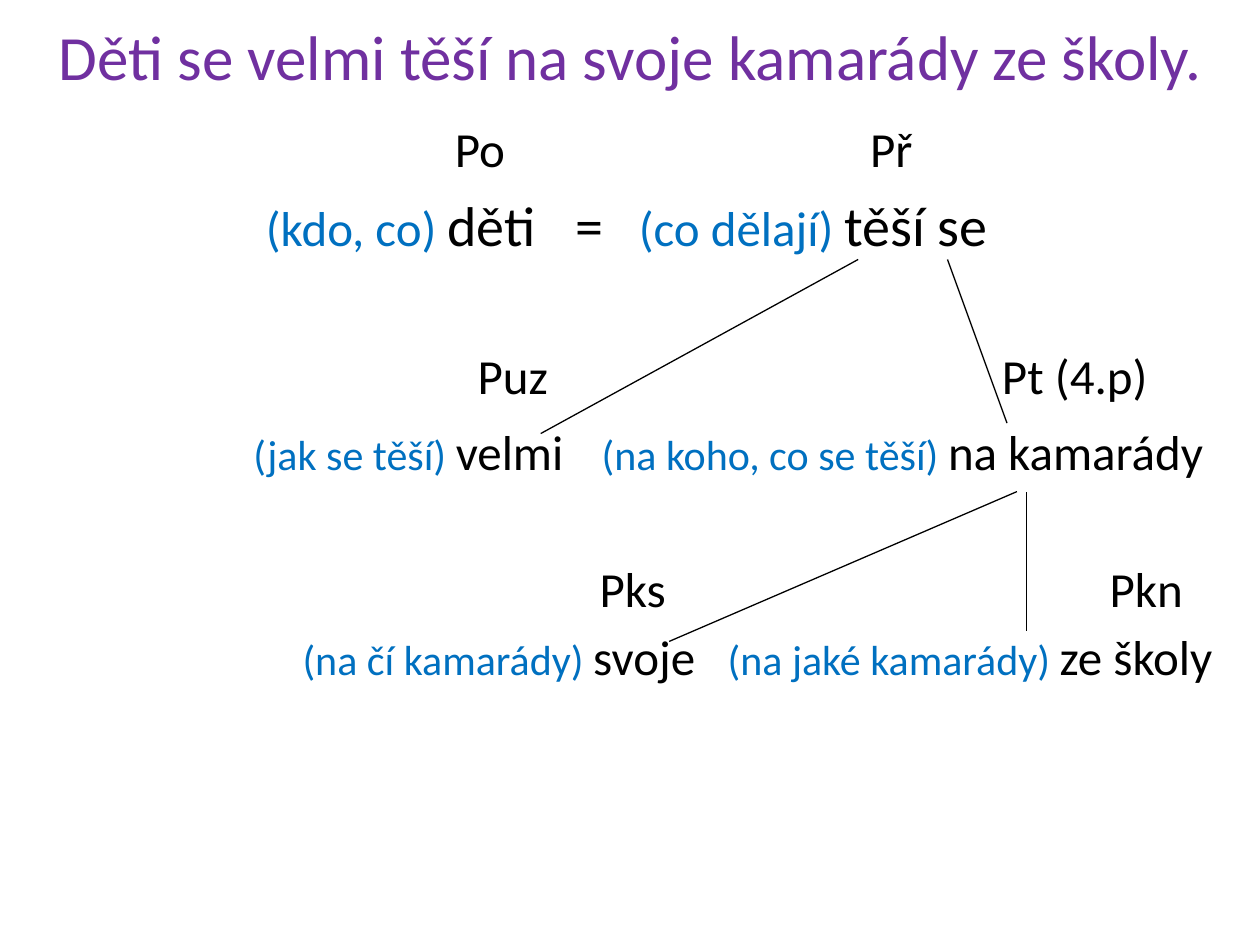
from dataclasses import dataclass

from lxml.etree import SubElement
from pptx import Presentation
from pptx.dml.color import RGBColor as RGB
from pptx.enum.shapes import MSO_CONNECTOR as Connector
from pptx.enum.text import MSO_ANCHOR as Anchor, PP_ALIGN as Align
from pptx.oxml.ns import qn
from pptx.util import Cm, Pt


@dataclass(frozen=True)
class Theme:
    font: str = "Calibri"
    title: RGB = RGB(0x70, 0x30, 0xA0)
    question: RGB = RGB(0x00, 0x70, 0xC0)
    text: RGB = RGB(0, 0, 0)
    title_size: int = 36
    large: int = 32
    normal: int = 28
    small: int = 24
    line: float = 0.75


T = Theme()

# Run styles: size and colour
LABEL = WORD = (T.normal, T.text)
MAIN_ASK = (T.normal, T.question)
MAIN_WORD = (T.large, T.text)
ASK = (T.small, T.question)

# Content
TITLE = "Děti se velmi těší na svoje kamarády ze školy."

# Each row: space before (pt), then columns of (left edge in cm, runs)
ROWS = [
    (0, [(9.17, [("Po", LABEL)]), (17.54, [("Př", LABEL)])]),
    (7.5, [(5.36, [("(kdo, co) ", MAIN_ASK), ("děti", MAIN_WORD)]),
           (11.6, [("=", MAIN_WORD)]),
           (12.88, [("(co dělají) ", MAIN_ASK), ("těší se", MAIN_WORD)])]),
    (50, [(9.63, [("Puz", LABEL)]), (20.2, [("Pt (4.p)", LABEL)])]),
    (10, [(5.11, [("(jak se těší) ", ASK), ("velmi", WORD)]),
          (12.13, [("(na koho, co se těší) ", ASK), ("na kamarády", WORD)])]),
    (44.5, [(12.09, [("Pks", LABEL)]), (22.37, [("Pkn", LABEL)])]),
    (5, [(6.1, [("(na čí kamarády) ", ASK), ("svoje", WORD)]),
         (14.67, [("(na jaké kamarády) ", ASK), ("ze školy", WORD)])]),
]

# Branches of the sentence tree in cm: x1, y1, x2, y2
BRANCHES = [
    (17.3, 5.23, 10.9, 8.74),
    (19.1, 5.23, 20.3, 8.53),
    (20.7, 9.92, 20.7, 12.73),
    (20.5, 9.91, 13.49, 12.93),
]

LEFT, WIDTH, INSET = 0.3, 24.8, 0.25


def add_text_frame(slide, top, height):
    tf = slide.shapes.add_textbox(Cm(LEFT), Cm(top), Cm(WIDTH), Cm(height)).text_frame
    tf.word_wrap = True
    tf.margin_left = tf.margin_right = Cm(INSET)
    return tf


def add_tabs(p, edges):
    tabs = SubElement(p._p.get_or_add_pPr(), qn("a:tabLst"))
    for edge in edges:
        SubElement(tabs, qn("a:tab"), pos=str(Cm(edge - LEFT - INSET)), algn="l")


def add_row(p, before, columns):
    add_tabs(p, [edge for edge, _ in columns])
    p.space_before = Pt(before)
    p.font.name = T.font
    for _, runs in columns:
        for i, (text, (size, color)) in enumerate(runs):
            r = p.add_run()
            r.text = text if i else "\t" + text
            r.font.size = Pt(size)
            r.font.color.rgb = color


def main():
    prs = Presentation()
    prs.slide_width, prs.slide_height = Cm(25.4), Cm(19.05)
    slide = prs.slides.add_slide(prs.slide_layouts[6])

    # Sentence to analyse
    tf = add_text_frame(slide, -0.48, 3.18)
    tf.vertical_anchor = Anchor.MIDDLE
    p = tf.paragraphs[0]
    p.text = TITLE
    p.alignment = Align.CENTER
    p.font.name, p.font.size = T.font, Pt(T.title_size)
    p.font.color.rgb = T.title

    # Sentence parts, aligned on tab stops
    tf = add_text_frame(slide, 2.27, 16.27)
    for i, (before, columns) in enumerate(ROWS):
        add_row(tf.add_paragraph() if i else tf.paragraphs[0], before, columns)

    # Branches
    for branch in BRANCHES:
        c = slide.shapes.add_connector(Connector.STRAIGHT, *map(Cm, branch))
        c.line.color.rgb = T.text
        c.line.width = Pt(T.line)
        SubElement(c._element.spPr, qn("a:effectLst"))

    prs.save("out.pptx")


if __name__ == "__main__":
    main()
